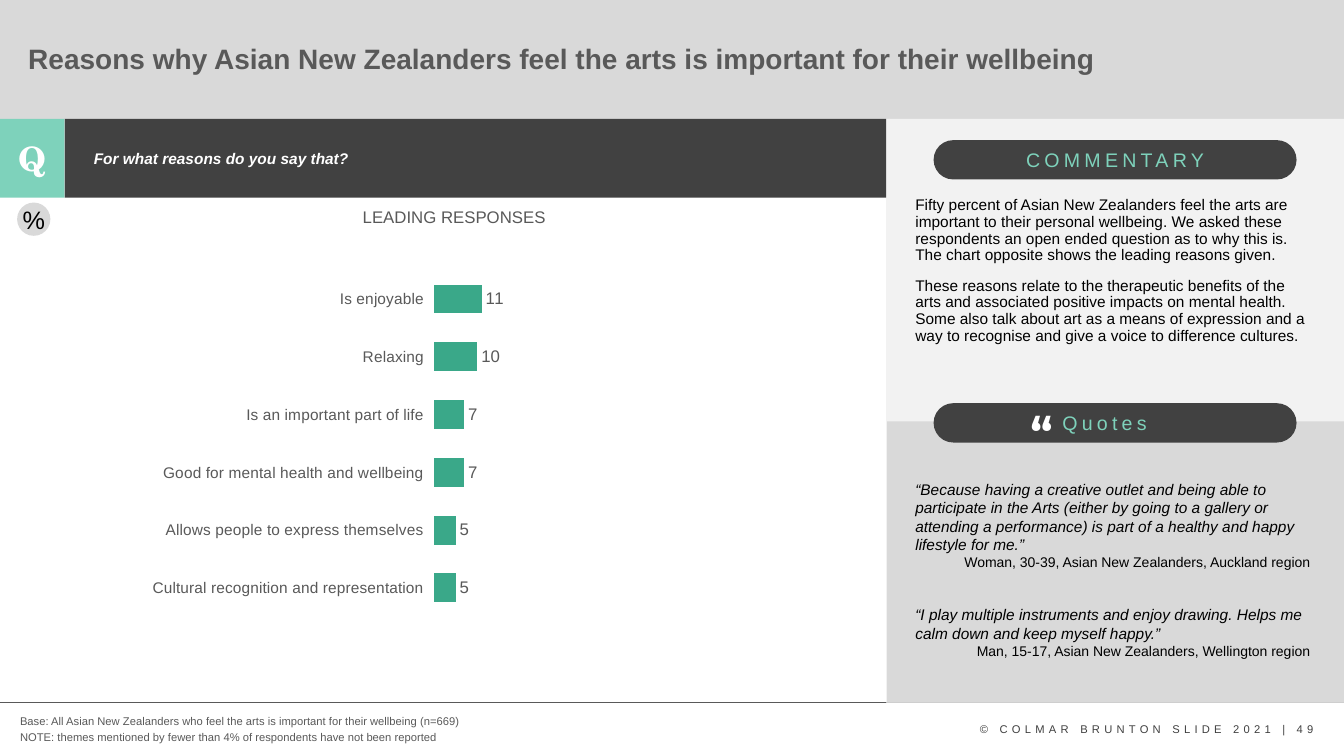
from lxml import etree
from pptx import Presentation
from pptx.chart.data import CategoryChartData
from pptx.dml.color import RGBColor
from pptx.enum.chart import XL_CHART_TYPE as ChartType, XL_LABEL_POSITION as LabelPosition
from pptx.enum.shapes import MSO_CONNECTOR as Connector, MSO_SHAPE as Preset
from pptx.enum.text import MSO_ANCHOR as Anchor, PP_ALIGN as Align
from pptx.oxml import parse_xml
from pptx.oxml.ns import nsdecls, qn
from pptx.util import Emu, Pt

EMU_PER_PX = 9144
CHARCOAL, MINT, GREEN = "414141", "7ED2BB", "3AA889"
SILVER, PALE, GREY = "D9D9D9", "F2F2F2", "595959"
WHITE, BLACK = "FFFFFF", "000000"

REASONS = {
    "Is enjoyable": 11,
    "Relaxing": 10,
    "Is an important part of life": 7,
    "Good for mental health and wellbeing": 7,
    "Allows people to express themselves": 5,
    "Cultural recognition and representation": 5,
}
COMMENTARY = [
    "Fifty percent of Asian New Zealanders feel the arts are important to their personal "
    "wellbeing. We asked these respondents an open ended question as to why this is. "
    "The chart opposite shows the leading reasons given.",
    "These reasons relate to the therapeutic benefits of the arts and associated positive "
    "impacts on mental health. Some also talk about art as a means of expression and a way "
    "to recognise and give a voice to difference cultures.",
]
QUOTES = [
    ("“Because having a creative outlet and being able to participate in the Arts (either by "
     "going to a gallery or attending a performance) is part of a healthy and happy lifestyle "
     "for me.”", "Woman, 30-39, Asian New Zealanders, Auckland region"),
    ("“I play multiple instruments and enjoy drawing. Helps me calm down and keep myself "
     "happy.”", "Man, 15-17, Asian New Zealanders, Wellington region"),
]
FOOTNOTES = [
    "Base: All Asian New Zealanders who feel the arts is important for their wellbeing (n=669)",
    "NOTE: themes mentioned by fewer than 4% of respondents have not been reported",
]


def px(*lengths):
    return [Emu(length * EMU_PER_PX) for length in lengths]


def color(value):
    return RGBColor.from_string(value)


def apply(target, values):
    for name, value in values.items():
        setattr(target, name, value)


def set_font(font, size, fill, **values):
    apply(font, {"name": "Arial", "size": Pt(size), **values})
    font.color.rgb = color(fill)


def set_frame(frame, insets=(10, 5, 10, 5), anchor=Anchor.TOP):
    names = ("margin_left", "margin_top", "margin_right", "margin_bottom")
    apply(frame, {"word_wrap": True, "vertical_anchor": anchor, **dict(zip(names, px(*insets)))})


def write(frame, text, size, fill, spacing=0, layout=None, **font):
    first = frame.paragraphs[0]
    paragraph = frame.add_paragraph() if first.runs else first
    apply(paragraph, {"alignment": Align.LEFT, **(layout or {})})
    run = paragraph.add_run()
    run.text = text
    set_font(run.font, size, fill, **font)
    if spacing:
        run.font._element.set("spc", str(spacing * 100))


def add_text(slide, box, **frame_format):
    frame = slide.shapes.add_textbox(*px(*box)).text_frame
    set_frame(frame, **frame_format)
    return frame


def add_block(slide, box, fill, preset=Preset.RECTANGLE, inset=0):
    shape = slide.shapes.add_shape(preset, *px(*box))
    shape.shadow.inherit = False
    shape.fill.solid()
    shape.fill.fore_color.rgb = color(fill)
    shape.line.fill.background()
    set_frame(shape.text_frame, (inset, 0, 0, 0), Anchor.MIDDLE)
    return shape


def add_pill(slide, top, text, alignment, inset=0):
    pill = add_block(slide, (926, top, 360, 39), CHARCOAL, Preset.ROUNDED_RECTANGLE, inset)
    pill.adjustments[0] = 0.5
    write(pill.text_frame, text, 14, MINT, 3, {"alignment": alignment})


def add_rule(slide, top):
    rule = slide.shapes.add_connector(Connector.STRAIGHT, *px(0, top, 1333, top))
    rule.line.color.rgb = color(GREY)
    rule.line.width = Pt(0.5)
    etree.SubElement(rule._element.spPr, qn("a:effectLst"))


def add_title(slide, text):
    title = slide.shapes.title
    apply(title, dict(zip(("left", "top", "width", "height"), px(18, 21, 1119, 78))))
    set_frame(title.text_frame, anchor=Anchor.MIDDLE)
    write(title.text_frame, text, 20, GREY, layout={"line_spacing": 0.9}, bold=True)
    slide.shapes._spTree.append(title._element)


def set_plot_area(chart, x, y, w, h):
    plot_area = chart._chartSpace.chart.plotArea
    for layout in plot_area.findall(qn("c:layout")):
        plot_area.remove(layout)
    sizes = "".join(f'<c:{name} val="{value}"/>' for name, value in zip("xywh", (x, y, w, h)))
    plot_area.insert(0, parse_xml(
        f'<c:layout {nsdecls("c")}><c:manualLayout><c:layoutTarget val="inner"/>'
        f'<c:xMode val="edge"/><c:yMode val="edge"/>{sizes}</c:manualLayout></c:layout>'))


def add_reasons_chart(slide, box):
    data = CategoryChartData()
    data.categories = list(REASONS)
    data.add_series("Series 1", list(REASONS.values()))
    chart = slide.shapes.add_chart(ChartType.BAR_CLUSTERED, *px(*box), data).chart
    apply(chart, {"has_legend": False, "has_title": False})
    set_font(chart.font, 10, BLACK)
    set_plot_area(chart, 0.48, 0.08, 0.52, 0.86)

    categories = chart.category_axis
    categories.reverse_order = True
    categories.format.line.fill.background()
    set_font(categories.tick_labels.font, 11, GREY)
    apply(chart.value_axis, {"visible": False, "has_major_gridlines": False,
                             "minimum_scale": 0, "maximum_scale": 100})

    plot = chart.plots[0]
    apply(plot, {"gap_width": 100, "vary_by_categories": False, "has_data_labels": True})
    apply(plot.data_labels, {"show_value": True, "position": LabelPosition.OUTSIDE_END})
    set_font(plot.data_labels.font, 12, GREY)
    bars = plot.series[0].format.fill
    bars.solid()
    bars.fore_color.rgb = color(GREEN)


def add_question(slide):
    bar = add_block(slide, (64, 118, 815, 78), CHARCOAL, inset=29)
    write(bar.text_frame, "For what reasons do you say that?", 11, WHITE, bold=True, italic=True)
    centred = {"alignment": Align.CENTER}
    badge = add_block(slide, (0, 118, 64, 78), MINT)
    write(badge.text_frame, "Q", 24, WHITE, layout=centred, name="TeX Gyre Schola", bold=True)
    percent = add_block(slide, (17, 201, 33, 33), SILVER, Preset.OVAL)
    write(percent.text_frame, "%", 18, BLACK, layout=centred)
    heading = add_text(slide, (305, 200, 291, 30))
    write(heading, "LEADING RESPONSES", 12, GREY, layout=centred)


def add_commentary(slide):
    add_pill(slide, 139, "COMMENTARY", Align.CENTER)
    frame = add_text(slide, (898, 191, 411, 200))
    for index, text in enumerate(COMMENTARY):
        write(frame, text, 11, BLACK,
              layout={"line_spacing": 0.9, "space_before": Pt(10 if index else 0)})


def add_quotes(slide):
    add_pill(slide, 400, "Quotes", Align.LEFT, inset=122)
    mark = add_text(slide, (1022, 417, 76, 32), insets=(0, 0, 0, 0), anchor=Anchor.MIDDLE)
    write(mark, "“", 32, WHITE, 3, {"line_spacing": 0.8}, name="Montserrat", bold=True)
    frame = add_text(slide, (898, 471, 411, 195))
    for index, (quote, speaker) in enumerate(QUOTES):
        write(frame, quote, 11, BLACK, layout={"space_before": Pt(25 if index else 0)}, italic=True)
        write(frame, speaker, 10, BLACK, layout={"alignment": Align.RIGHT})


def add_footer(slide):
    notes = add_text(slide, (10, 704, 622, 39))
    for index, text in enumerate(FOOTNOTES):
        write(notes, text, 8, GREY, layout={"space_before": Pt(1.6 if index else 0)})
    credit = add_text(slide, (962, 712, 361, 24))
    write(credit, "© COLMAR BRUNTON SLIDE 2021 | 49", 8, "404040", 3)


def main():
    presentation = Presentation()
    presentation.slide_width, presentation.slide_height = px(1333, 750)
    slide = presentation.slides.add_slide(presentation.slide_layouts[5])
    add_block(slide, (0, 0, 1333, 118), SILVER)
    add_title(slide, "Reasons why Asian New Zealanders feel the arts is important for their wellbeing")
    add_rule(slide, 697)
    add_block(slide, (879, 118, 454, 579), PALE)
    add_block(slide, (880, 418, 453, 279), SILVER)
    add_question(slide)
    add_reasons_chart(slide, (33, 236, 828, 400))
    add_commentary(slide)
    add_quotes(slide)
    add_footer(slide)
    presentation.save("out.pptx")


if __name__ == "__main__":
    main()
